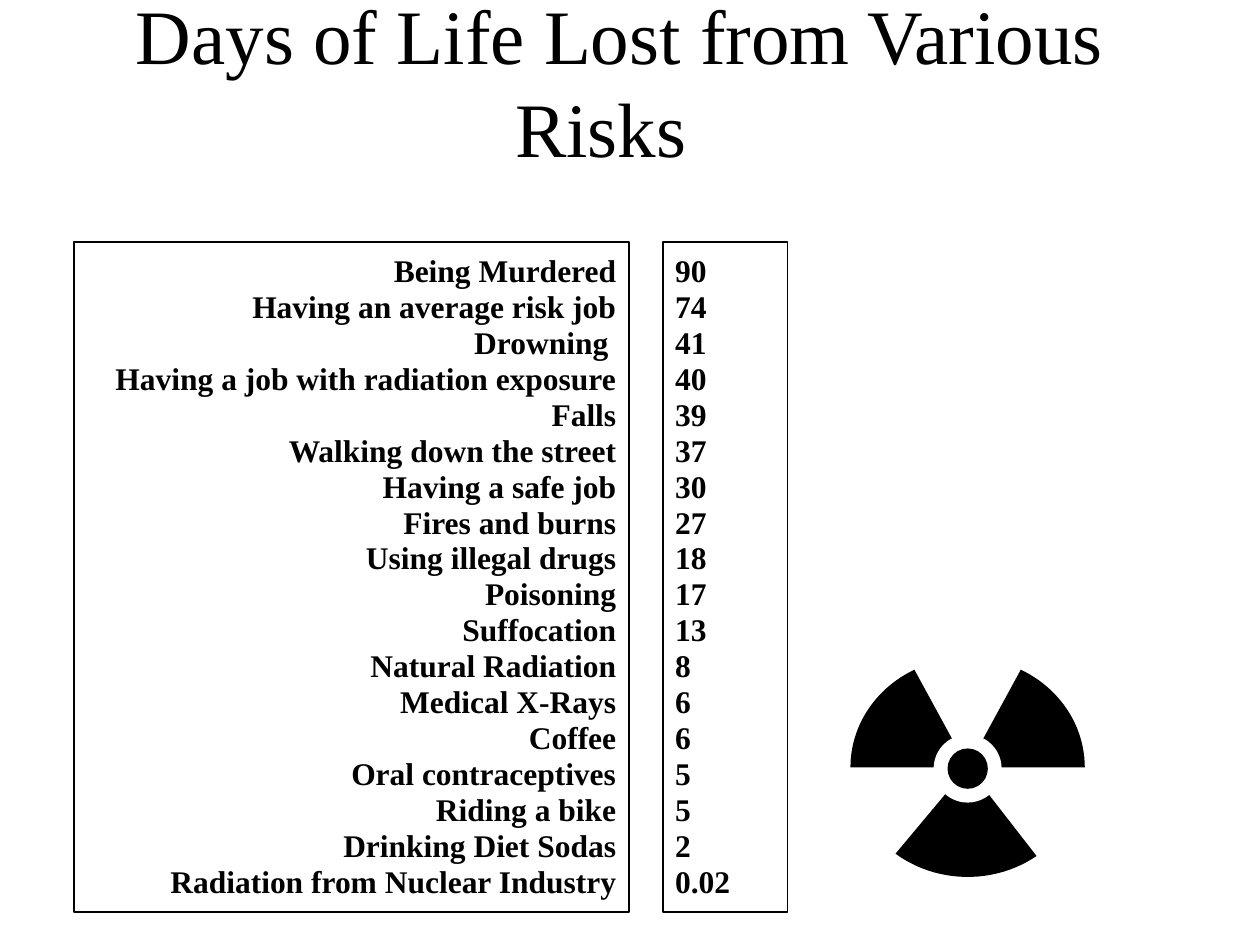
"""Build the slide that ranks risks by days of life lost."""
from dataclasses import dataclass
from math import cos, radians, sin

from pptx import Presentation
from pptx.dml.color import RGBColor
from pptx.enum.shapes import MSO_SHAPE
from pptx.enum.text import MSO_ANCHOR, PP_ALIGN
from pptx.util import Inches, Pt


@dataclass(frozen=True)
class Theme:
    font: str = "Times New Roman"
    ink: RGBColor = RGBColor(0, 0, 0)
    paper: RGBColor = RGBColor(255, 255, 255)
    title_size: int = 44
    list_size: int = 18
    border: int = 1


THEME = Theme()

RISKS = [
    ("Being Murdered", "90"),
    ("Having an average risk job", "74"),
    ("Drowning ", "41"),
    ("Having a job with radiation exposure", "40"),
    ("Falls", "39"),
    ("Walking down the street", "37"),
    ("Having a safe job", "30"),
    ("Fires and burns", "27"),
    ("Using illegal drugs", "18"),
    ("Poisoning", "17"),
    ("Suffocation", "13"),
    ("Natural Radiation", "8"),
    ("Medical X-Rays", "6"),
    ("Coffee", "6"),
    ("Oral contraceptives", "5"),
    ("Riding a bike", "5"),
    ("Drinking Diet Sodas", "2"),
    ("Radiation from Nuclear Industry", "0.02"),
]

CENTER_X, CENTER_Y = 7.68, 6.09
RADIUS_X, RADIUS_Y = 0.93, 0.87
BLADES = [(117, 180), (232, 306), (0, 63)]
DISCS = [(0.27, THEME.paper), (0.16, THEME.ink)]


def format_paragraph(paragraph, size, align, bold=False):
    paragraph.alignment = align
    for run in paragraph.runs:
        run.font.name = THEME.font
        run.font.size = Pt(size)
        run.font.bold = bold
        run.font.color.rgb = THEME.ink


def add_title(slide, text):
    title = slide.shapes.add_textbox(Inches(0.33), Inches(0.19), Inches(8.88), Inches(1.23))
    frame = title.text_frame
    frame.word_wrap = True
    frame.vertical_anchor = MSO_ANCHOR.BOTTOM
    frame.text = text
    heading = frame.paragraphs[0]
    format_paragraph(heading, THEME.title_size, PP_ALIGN.CENTER)
    properties = heading._p.get_or_add_pPr()
    properties.set("marL", "0")
    properties.set("indent", str(Inches(0.3)))


def add_column(slide, left, width, entries, align):
    column = slide.shapes.add_shape(
        MSO_SHAPE.RECTANGLE, Inches(left), Inches(1.92), Inches(width), Inches(5.32))
    column.shadow.inherit = False
    column.fill.background()
    column.line.color.rgb = THEME.ink
    column.line.width = Pt(THEME.border)
    frame = column.text_frame
    frame.word_wrap = False
    frame.vertical_anchor = MSO_ANCHOR.MIDDLE
    frame.text = "\n".join(entries)
    for paragraph in frame.paragraphs:
        paragraph.line_spacing = 0.95
        format_paragraph(paragraph, THEME.list_size, align, bold=True)


def fill_plain(part, color):
    part.shadow.inherit = False
    part.fill.solid()
    part.fill.fore_color.rgb = color
    part.line.fill.background()


def add_blade(trefoil, start, end):
    steps = 24
    angles = [radians(start + (end - start) * step / steps) for step in range(steps + 1)]
    rim = [(Inches(CENTER_X + RADIUS_X * cos(angle)), Inches(CENTER_Y - RADIUS_Y * sin(angle)))
           for angle in angles]
    outline = trefoil.shapes.build_freeform(Inches(CENTER_X), Inches(CENTER_Y))
    outline.add_line_segments(rim, close=True)
    fill_plain(outline.convert_to_shape(), THEME.ink)


def add_disc(trefoil, radius, color):
    disc = trefoil.shapes.add_shape(
        MSO_SHAPE.OVAL, Inches(CENTER_X - radius), Inches(CENTER_Y + 0.01 - radius),
        Inches(2 * radius), Inches(2 * radius))
    fill_plain(disc, color)


def add_trefoil(slide):
    trefoil = slide.shapes.add_group_shape()
    for start, end in BLADES:
        add_blade(trefoil, start, end)
    for radius, color in DISCS:
        add_disc(trefoil, radius, color)


def main():
    deck = Presentation()
    deck.slide_width, deck.slide_height = Inches(10), Inches(7.5)
    slide = deck.slides.add_slide(deck.slide_layouts[6])
    slide.background.fill.solid()
    slide.background.fill.fore_color.rgb = THEME.paper
    add_title(slide, "Days of Life Lost from Various Risks")
    causes, days = zip(*RISKS)
    add_column(slide, 0.59, 4.4, causes, PP_ALIGN.RIGHT)
    add_column(slide, 5.26, 0.99, days, PP_ALIGN.LEFT)
    add_trefoil(slide)
    deck.save("out.pptx")


if __name__ == "__main__":
    main()
